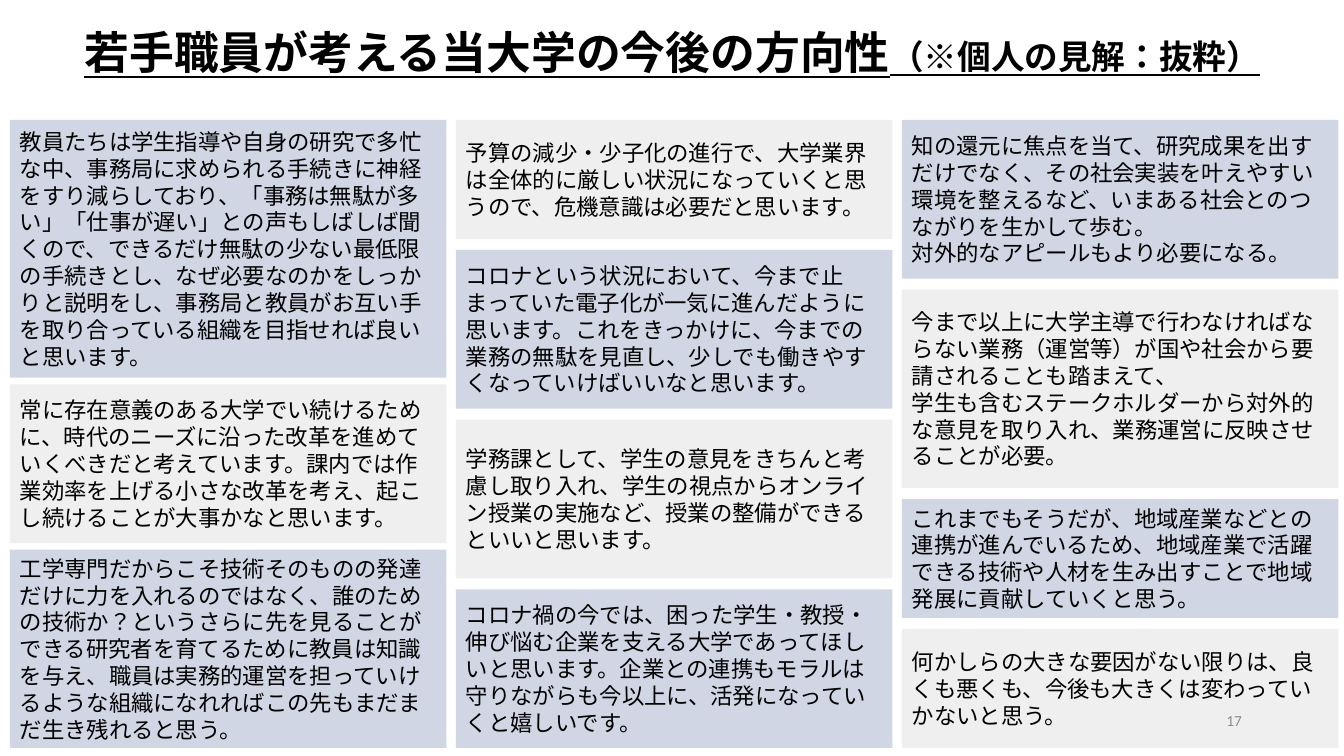
from lxml.etree import SubElement
from pptx import Presentation
from pptx.dml.color import RGBColor
from pptx.enum.lang import MSO_LANGUAGE_ID as Lang
from pptx.enum.shapes import MSO_SHAPE as Preset
from pptx.enum.text import MSO_ANCHOR as Anchor, PP_ALIGN as Align
from pptx.oxml.ns import qn
from pptx.util import Cm, Pt

BLUE = RGBColor(0xD0, 0xD6, 0xE4)
GREY = RGBColor(0xEF, 0xEF, 0xEF)
BLACK = RGBColor(0, 0, 0)
NUMBER_GREY = RGBColor(0x8C, 0x8C, 0x8C)
JAPANESE_FONT = "Noto Sans CJK JP"
LATIN_FONT = "Calibri"

LEFT, TOP, BOTTOM = 0.25, 3.02, 18.85
WIDTH, PITCH = 11, 11.24

COLUMNS = [
    [
        (6.5, ["教員たちは学生指導や自身の研究で多忙な中、事務局に求められる手続きに神経をすり減らしており、"
               "「事務は無駄が多い」「仕事が遅い」との声もしばしば聞くので、できるだけ無駄の少ない最低限の手続きとし、"
               "なぜ必要なのかをしっかりと説明をし、事務局と教員がお互い手を取り合っている組織を目指せれば良いと思います。"]),
        (4, ["常に存在意義のある大学でい続けるために、時代のニーズに沿った改革を進めていくべきだと考えています。"
             "課内では作業効率を上げる小さな改革を考え、起こし続けることが大事かなと思います。"]),
        (5, ["工学専門だからこそ技術そのものの発達だけに力を入れるのではなく、誰のための技術か？というさらに先を見ることができる"
             "研究者を育てるために教員は知識を与え、職員は実務的運営を担っていけるような組織になれればこの先もまだまだ生き残れると思う。"]),
    ],
    [
        (3, ["予算の減少・少子化の進行で、大学業界は全体的に厳しい状況になっていくと思うので、危機意識は必要だと思います。"]),
        (4, ["コロナという状況において、今まで止まっていた電子化が一気に進んだように思います。"
             "これをきっかけに、今までの業務の無駄を見直し、少しでも働きやすくなっていけばいいなと思います。"]),
        (4, ["学務課として、学生の意見をきちんと考慮し取り入れ、学生の視点からオンライン授業の実施など、"
             "授業の整備ができるといいと思います。"]),
        (4, ["コロナ禍の今では、困った学生・教授・伸び悩む企業を支える大学であってほしいと思います。"
             "企業との連携もモラルは守りながらも今以上に、活発になっていくと嬉しいです。"]),
    ],
    [
        (4, ["知の還元に焦点を当て、研究成果を出すだけでなく、その社会実装を叶えやすい環境を整えるなど、"
             "いまある社会とのつながりを生かして歩む。",
             "対外的なアピールもより必要になる。"]),
        (5, ["今まで以上に大学主導で行わなければならない業務（運営等）が国や社会から要請されることも踏まえて、",
             "学生も含むステークホルダーから対外的な意見を取り入れ、業務運営に反映させることが必要。"]),
        (3, ["これまでもそうだが、地域産業などとの連携が進んでいるため、地域産業で活躍できる技術や人材を生み出すことで"
             "地域発展に貢献していくと思う。"]),
        (3, ["何かしらの大きな要因がない限りは、良くも悪くも、今後も大きくは変わっていかないと思う。"]),
    ],
]


class OpinionSlide:
    """Holds the slide and the text style of its title, opinions and number."""

    def __init__(self, slide):
        self.shapes = slide.shapes
        self.body_size = 16

    def add_run(self, paragraph, text, size, color=BLACK, font=JAPANESE_FONT, heading=False):
        run = paragraph.add_run()
        run.text = text
        style = run.font
        style.size = Pt(size)
        style.name = font
        style.color.rgb = color
        style.language_id = Lang.JAPANESE
        if heading:
            style.bold = style.underline = True
        SubElement(style._element, qn("a:ea"), typeface=font)

    def add_paragraph(self, frame, index, align, size):
        paragraph = frame.add_paragraph() if index else frame.paragraphs[0]
        paragraph.alignment = align
        paragraph.line_spacing = Pt(1.2 * size)
        return paragraph

    def add_frame(self, left, top, width, height, anchor):
        frame = self.shapes.add_textbox(Cm(left), Cm(top), Cm(width), Cm(height)).text_frame
        frame.word_wrap = True
        frame.vertical_anchor = anchor
        return frame

    def add_title(self, parts):
        frame = self.add_frame(0.94, 0.51, 32, 1.63, Anchor.TOP)
        heading = self.add_paragraph(frame, 0, Align.CENTER, parts[0][1])
        for text, size in parts:
            self.add_run(heading, text, size, heading=True)

    def add_opinion(self, left, top, height, fill, paragraphs):
        panel = self.shapes.add_shape(Preset.RECTANGLE, Cm(left), Cm(top), Cm(WIDTH), Cm(height))
        panel.shadow.inherit = False
        panel.fill.solid()
        panel.fill.fore_color.rgb = fill
        panel.line.fill.background()
        frame = panel.text_frame
        frame.word_wrap = True
        frame.vertical_anchor = Anchor.MIDDLE
        for index, text in enumerate(paragraphs):
            opinion = self.add_paragraph(frame, index, Align.LEFT, self.body_size)
            self.add_run(opinion, text, self.body_size)

    def add_column(self, column, opinions):
        spare = BOTTOM - TOP - sum(height for height, _ in opinions)
        gap = spare / (len(opinions) - 1)
        top = TOP
        for row, (height, paragraphs) in enumerate(opinions):
            fill = GREY if (column + row) % 2 else BLUE
            self.add_opinion(LEFT + column * PITCH, top, height, fill, paragraphs)
            top += height + gap

    def add_number(self, number):
        frame = self.add_frame(23.93, 17.65, 7.62, 1.02, Anchor.MIDDLE)
        paragraph = self.add_paragraph(frame, 0, Align.RIGHT, 11)
        self.add_run(paragraph, number, 11, NUMBER_GREY, LATIN_FONT)


def main():
    deck = Presentation()
    deck.slide_width, deck.slide_height = Cm(33.87), Cm(19.05)
    page = OpinionSlide(deck.slides.add_slide(deck.slide_layouts[6]))
    page.add_title([("若手職員が考える当大学の今後の方向性", 32), ("（※個人の見解：抜粋）", 24)])
    for column, opinions in enumerate(COLUMNS):
        page.add_column(column, opinions)
    page.add_number("17")
    deck.save("out.pptx")


if __name__ == "__main__":
    main()
